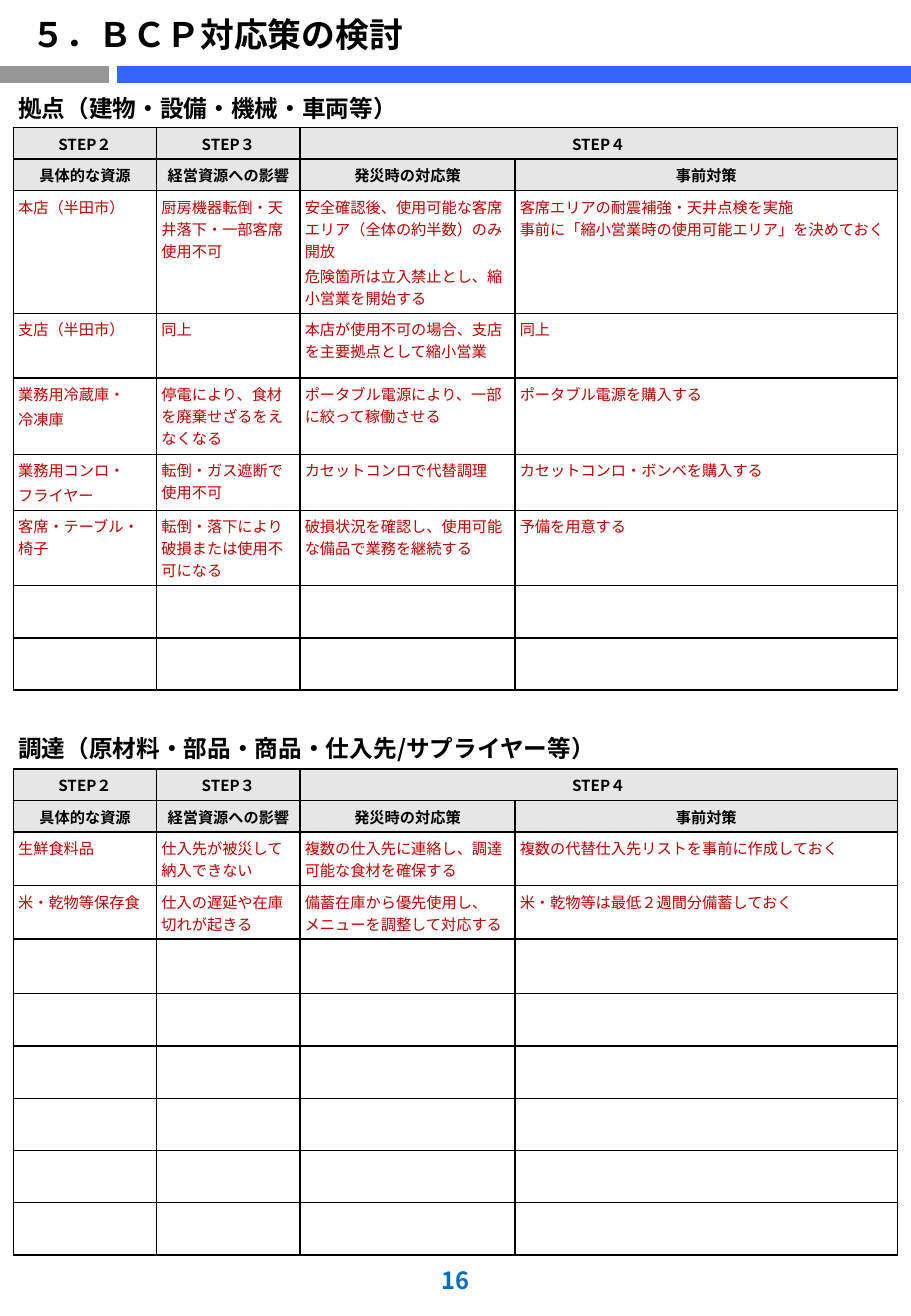
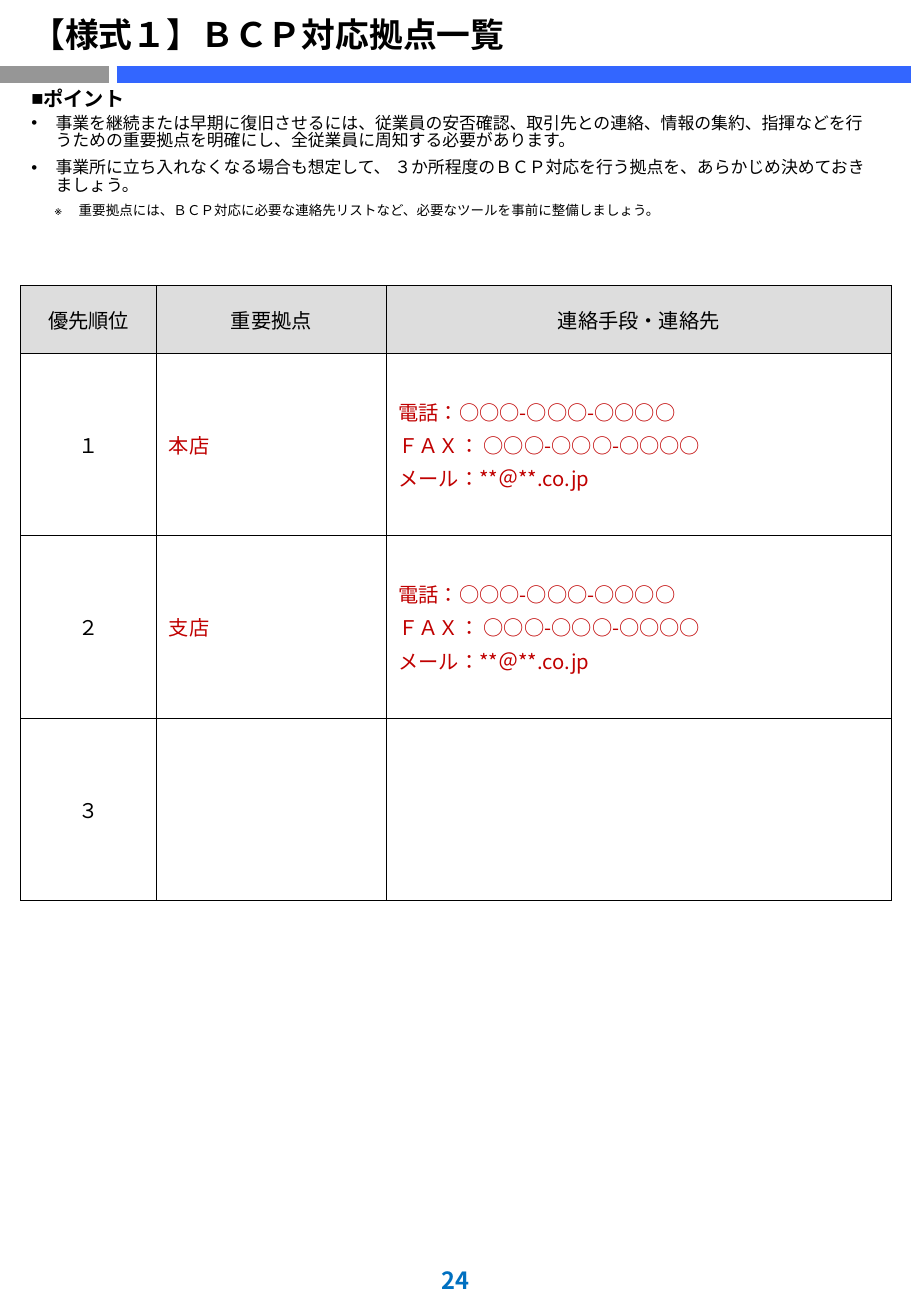
from dataclasses import dataclass, replace
from typing import Optional

from lxml import etree
from pptx import Presentation
from pptx.dml.color import RGBColor
from pptx.enum.lang import MSO_LANGUAGE_ID
from pptx.enum.shapes import MSO_CONNECTOR
from pptx.enum.text import MSO_ANCHOR, PP_ALIGN
from pptx.oxml.ns import qn
from pptx.util import Inches, Pt

BLACK = RGBColor(0x00, 0x00, 0x00)
RED = RGBColor(0xC0, 0x00, 0x00)
BLUE = RGBColor(0x33, 0x66, 0xFF)
PAGE_BLUE = RGBColor(0x00, 0x70, 0xC0)
GRAY = RGBColor(0x96, 0x96, 0x96)
LIGHT_GRAY = RGBColor(0xE7, 0xE6, 0xE6)
HEADER_GRAY = RGBColor(0xDD, 0xDD, 0xDD)

LEFT, CENTER = PP_ALIGN.LEFT, PP_ALIGN.CENTER
TOP, MIDDLE, BOTTOM = MSO_ANCHOR.TOP, MSO_ANCHOR.MIDDLE, MSO_ANCHOR.BOTTOM
STRAIGHT = MSO_CONNECTOR.STRAIGHT
JAPANESE = MSO_LANGUAGE_ID.JAPANESE

FONT = "Noto Sans CJK JP"
LATIN_FONT = "Arial"
WIDTH, HEIGHT = 7.5, 10.83
MARGIN, CONTENT_WIDTH = 0.16, 7.17
BAND_TOP = 0.61


@dataclass(frozen=True)
class CellStyle:
    size: float
    color: RGBColor = BLACK
    bold: bool = False
    font: str = FONT
    align: PP_ALIGN = LEFT
    anchor: MSO_ANCHOR = TOP
    fill: Optional[RGBColor] = None
    borders: str = "LRTB"


@dataclass(frozen=True)
class Row:
    """A text of None joins its cell to the one on its left."""
    height: float
    texts: tuple
    style: CellStyle
    first_style: Optional[CellStyle] = None


@dataclass(frozen=True)
class TableFormat:
    columns: tuple
    margins: tuple  # horizontal, vertical
    border: float


@dataclass(frozen=True)
class Point:
    text: str
    size: float
    bullet: str
    left: float
    hanging: float
    after: float
    bold: bool = False


# Styles and contents of the resource table
ENTRY = CellStyle(9, RED)
HEADING = CellStyle(9, bold=True, align=CENTER, anchor=MIDDLE, fill=LIGHT_GRAY)
CAPTION = CellStyle(14, bold=True, anchor=BOTTOM, borders="TB")
FIRST_CAPTION = replace(CAPTION, font=LATIN_FONT, borders="B")
RESOURCE_FORMAT = TableFormat((1.18, 1.18, 1.77, 3.15), (0.04, 0.04), 1)

HEADING_ROWS = [
    Row(0.26, ("STEP２", "STEP３", "STEP４", None), HEADING),
    Row(0.26, ("具体的な資源", "経営資源への影響", "発災時の対応策", "事前対策"), HEADING),
]
EMPTY_ROW = Row(0.43, ("",) * 4, ENTRY)

# In cell texts \n starts a spaced paragraph and \v an unspaced one.
RESOURCE_ROWS = [
    Row(0.35, ("拠点（建物・設備・機械・車両等）", None, None, None), FIRST_CAPTION),
    *HEADING_ROWS,
    Row(1.01, ("本店（半田市）", "厨房機器転倒・天井落下・一部客席使用不可",
               "安全確認後、使用可能な客席エリア（全体の約半数）のみ開放\n"
               "危険箇所は立入禁止とし、縮小営業を開始する",
               "客席エリアの耐震補強・天井点検を実施\v"
               "事前に「縮小営業時の使用可能エリア」を決めておく"), ENTRY),
    Row(0.53, ("支店（半田市）", "同上",
               "本店が使用不可の場合、支店を主要拠点として縮小営業", "同上"), ENTRY),
    Row(0.63, ("業務用冷蔵庫・\n冷凍庫", "停電により、食材を廃棄せざるをえなくなる",
               "ポータブル電源により、一部に絞って稼働させる",
               "ポータブル電源を購入する"), ENTRY),
    Row(0.46, ("業務用コンロ・\nフライヤー", "転倒・ガス遮断で使用不可",
               "カセットコンロで代替調理", "カセットコンロ・ボンベを購入する"), ENTRY),
    Row(0.62, ("客席・テーブル・椅子", "転倒・落下により破損または使用不可になる",
               "破損状況を確認し、使用可能な備品で業務を継続する", "予備を用意する"), ENTRY),
    *[EMPTY_ROW] * 2,
    Row(0.65, ("調達（原材料・部品・商品・仕入先/サプライヤー等）", None, None, None), CAPTION),
    *HEADING_ROWS,
    Row(0.44, ("生鮮食料品", "仕入先が被災して納入できない",
               "複数の仕入先に連絡し、調達可能な食材を確保する",
               "複数の代替仕入先リストを事前に作成しておく"), ENTRY),
    Row(0.44, ("米・乾物等保存食", "仕入の遅延や在庫切れが起きる",
               "備蓄在庫から優先使用し、\vメニューを調整して対応する",
               "米・乾物等は最低２週間分備蓄しておく"), ENTRY),
    replace(EMPTY_ROW, height=0.45),
    *[EMPTY_ROW] * 5,
]

# Styles and contents of the base list
BASE_ENTRY = CellStyle(12, RED, anchor=MIDDLE)
BASE_NUMBER = replace(BASE_ENTRY, color=BLACK, align=CENTER)
BASE_HEADING = replace(BASE_NUMBER, fill=HEADER_GRAY)
BASE_FORMAT = TableFormat((1.12, 1.89, 4.16), (0.1, 0.05), 0.5)
CONTACT = "電話：○○○-○○○-○○○○\nＦＡＸ： ○○○-○○○-○○○○\nメール：**＠**.co.jp"
BASE_ROWS = [
    Row(0.56, ("優先順位", "重要拠点", "連絡手段・連絡先"), BASE_HEADING),
    *[Row(1.5, texts, BASE_ENTRY, BASE_NUMBER) for texts in (
        ("１", "本店", CONTACT), ("２", "支店", CONTACT), ("３", "", ""))],
]

POINTS = [
    Point("ポイント", 12, "■", 0.1, 0.1, 3, bold=True),
    Point("事業を継続または早期に復旧させるには、従業員の安否確認、取引先との連絡、情報の集約、"
          "指揮などを行うための重要拠点を明確にし、全従業員に周知する必要があります。",
          10, "•", 0.2, 0.2, 6),
    Point("事業所に立ち入れなくなる場合も想定して、 ３か所程度のＢＣＰ対応を行う拠点を、"
          "あらかじめ決めておきましょう。", 10, "•", 0.2, 0.2, 6),
    Point("重要拠点には、ＢＣＰ対応に必要な連絡先リストなど、必要なツールを事前に整備しましょう。",
          8, "※", 0.39, 0.2, 3),
]


def write_line(paragraph, text: str, *, size: float, color: RGBColor = BLACK,
               bold: bool = False, font: str = FONT, align: PP_ALIGN = LEFT,
               before: float = 0) -> None:
    """Fill one paragraph with text in a single format."""
    paragraph.alignment = align
    paragraph.space_before = Pt(before)
    if not text:
        etree.SubElement(paragraph._p, qn("a:endParaRPr"), sz=str(int(size * 100)))
        return
    run = paragraph.add_run()
    run.text = text
    run.font.size = Pt(size)
    run.font.bold = bold
    run.font.color.rgb = color
    run.font.name = font
    run.font.language_id = JAPANESE
    etree.SubElement(run._r.get_or_add_rPr(), qn("a:ea"), typeface=font)


def add_text_box(slide, left: float, top: float, width: float, height: float,
                 anchor: MSO_ANCHOR = BOTTOM):
    frame = slide.shapes.add_textbox(
        Inches(left), Inches(top), Inches(width), Inches(height)).text_frame
    frame.word_wrap = True
    frame.vertical_anchor = anchor
    return frame


def add_band(slide, start: float, end: float, color: RGBColor) -> None:
    band = slide.shapes.add_connector(
        STRAIGHT, Inches(start), Inches(BAND_TOP), Inches(end), Inches(BAND_TOP))
    band.line.color.rgb = color
    band.line.width = Pt(10)
    etree.SubElement(band._element.spPr, qn("a:effectLst"))


def add_page(presentation, title: str, number: int):
    """Add a slide with the shared title, bands and page number."""
    slide = presentation.slides.add_slide(presentation.slide_layouts[6])
    add_band(slide, 0, 0.9, GRAY)
    add_band(slide, 0.96, WIDTH, BLUE)
    heading = add_text_box(slide, MARGIN, 0.04, CONTENT_WIDTH, 0.46)
    write_line(heading.paragraphs[0], title, size=20, bold=True)
    footer = add_text_box(slide, 0, 10.3, WIDTH, 0.4)
    write_line(footer.paragraphs[0], str(number), size=14, bold=True,
               color=PAGE_BLUE, align=CENTER)
    return slide


def set_borders(cell, sides: str, width: float) -> None:
    properties = cell._tc.get_or_add_tcPr()
    for side in "LRTB":
        line = etree.SubElement(properties, qn(f"a:ln{side}"), w=str(Pt(width)))
        if side in sides:
            fill = etree.SubElement(line, qn("a:solidFill"))
            etree.SubElement(fill, qn("a:srgbClr"), val=str(BLACK))
        else:
            etree.SubElement(line, qn("a:noFill"))


def fill_cell(cell, text: str, style: CellStyle, table_format: TableFormat) -> None:
    horizontal, vertical = map(Inches, table_format.margins)
    cell.margin_left = cell.margin_right = horizontal
    cell.margin_top = cell.margin_bottom = vertical
    cell.vertical_anchor = style.anchor
    set_borders(cell, style.borders, table_format.border)
    if style.fill is None:
        cell.fill.background()
    else:
        cell.fill.solid()
        cell.fill.fore_color.rgb = style.fill
    frame = cell.text_frame
    for block_index, block in enumerate(text.split("\n")):
        for line_index, line in enumerate(block.split("\v")):
            is_first = block_index == line_index == 0
            paragraph = frame.paragraphs[0] if is_first else frame.add_paragraph()
            spaced = block_index > 0 and line_index == 0
            write_line(paragraph, line, size=style.size, color=style.color,
                       bold=style.bold, font=style.font, align=style.align,
                       before=style.size * 0.2 if spaced else 0)


def add_grid(slide, left: float, top: float, rows: list[Row],
             table_format: TableFormat) -> None:
    columns = table_format.columns
    table = slide.shapes.add_table(
        len(rows), len(columns), Inches(left), Inches(top), Inches(sum(columns)),
        Inches(sum(row.height for row in rows))).table
    table.first_row = table.horz_banding = False
    for column, width in zip(table.columns, columns):
        column.width = Inches(width)
    for row_index, row in enumerate(rows):
        table.rows[row_index].height = Inches(row.height)
        origin = 0
        for column_index, text in enumerate(row.texts):
            cell = table.cell(row_index, column_index)
            is_first = column_index == 0
            style = row.first_style if is_first and row.first_style else row.style
            fill_cell(cell, text or "", style, table_format)
            if text is not None:
                origin = column_index
            elif row.texts[column_index + 1:column_index + 2] != (None,):
                table.cell(row_index, origin).merge(cell)


def add_points(slide, points: list[Point]) -> None:
    frame = add_text_box(slide, MARGIN, 0.69, CONTENT_WIDTH, 1.31, TOP)
    for index, point in enumerate(points):
        paragraph = frame.add_paragraph() if index else frame.paragraphs[0]
        write_line(paragraph, point.text, size=point.size, bold=point.bold)
        paragraph.line_spacing = 0.85
        paragraph.space_after = Pt(point.after)
        properties = paragraph._p.get_or_add_pPr()
        properties.set("marL", str(Inches(point.left)))
        properties.set("indent", str(-Inches(point.hanging)))
        etree.SubElement(properties, qn("a:buFont"), typeface=LATIN_FONT)
        etree.SubElement(properties, qn("a:buChar"), char=point.bullet)


def main() -> None:
    presentation = Presentation()
    presentation.slide_width = Inches(WIDTH)
    presentation.slide_height = Inches(HEIGHT)

    # Measures for each resource
    slide = add_page(presentation, "５．ＢＣＰ対応策の検討", 16)
    add_grid(slide, 0.11, 0.7, RESOURCE_ROWS, RESOURCE_FORMAT)

    # List of bases
    slide = add_page(presentation, "【様式１】ＢＣＰ対応拠点一覧", 24)
    add_points(slide, POINTS)
    add_grid(slide, 0.17, 2.35, BASE_ROWS, BASE_FORMAT)

    presentation.save("out.pptx")


if __name__ == "__main__":
    main()
